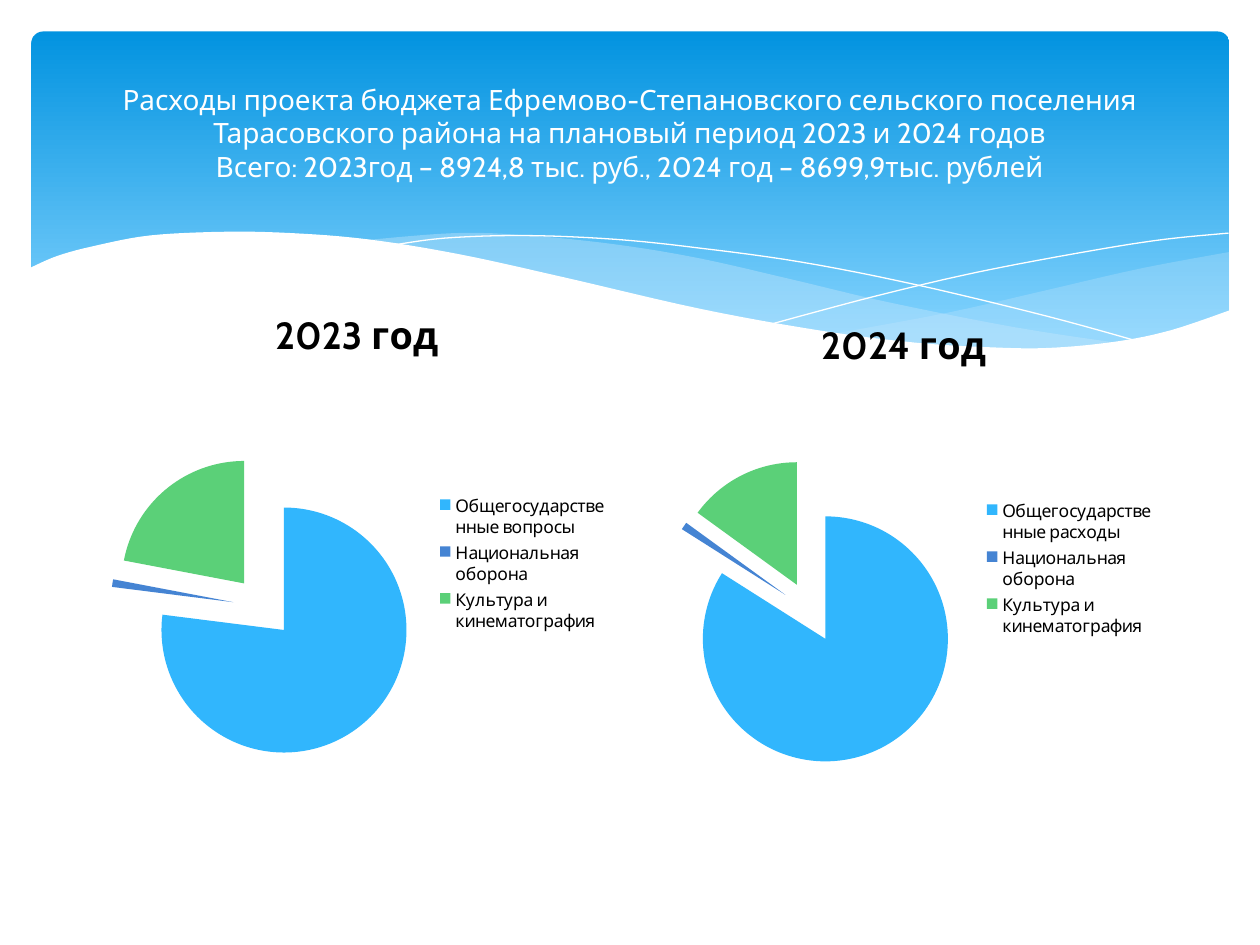
from dataclasses import dataclass

from lxml.etree import SubElement
from pptx import Presentation
from pptx.chart.data import CategoryChartData
from pptx.dml.color import RGBColor
from pptx.enum.chart import XL_CHART_TYPE, XL_LEGEND_POSITION
from pptx.enum.shapes import MSO_SHAPE
from pptx.enum.text import MSO_ANCHOR, PP_ALIGN
from pptx.oxml.ns import qn
from pptx.slide import Slide
from pptx.text.text import TextFrame
from pptx.util import Pt

Point = tuple[float, float]


@dataclass(frozen=True)
class Theme:
    font: str = "Cabin"
    white: str = "FFFFFF"
    black: str = "000000"
    sky: str = "0293E0"
    pale: str = "83D3FE"
    mist: str = "C6E7FC"
    slices: tuple[str, ...] = ("31B6FD", "4584D3", "5BD078")
    title: float = 16
    head: float = 21.6
    label: float = 10


@dataclass(frozen=True)
class Wave:
    curves: tuple[tuple[Point, ...], ...]
    color: str
    alpha: int = 100
    closed: bool = True


@dataclass(frozen=True)
class Pie:
    box: tuple[float, float, float, float]
    title: str
    series: str
    names: tuple[str, ...]
    values: tuple[int, ...]


THEME = Theme()

WAVES = (
    Wave((((702.5, 144), (652, 153.4), (599, 165.6), (542, 178.6), (476, 190.8)),
          ((476, 190.8), (518, 196), (562, 199.4), (608, 199.4), (646, 194.4),
           (678, 186.5), (702.5, 177.8))), THEME.mist, 29),
    Wave((((643, 196.6), (581, 187.2), (508, 172.8), (453, 159.8), (399.6, 147.6),
           (352, 139.7), (302.4, 134.6), (260, 133.2), (206, 137.5)),
          ((206, 137.5), (246, 143.3), (291, 152), (323, 159.8), (381.6, 172.8),
           (432.7, 183.6), (489.6, 193), (538.6, 198.7), (589, 200.2),
           (617, 199.4), (643, 196.6))), THEME.mist, 40),
    Wave((((222.5, 140.4), (254, 136.1), (299.5, 134.6), (352, 136.8), (400, 141.8),
           (458, 149.8), (523.4, 162.7), (598.3, 180.7), (653, 195.8)),),
         THEME.white, closed=False),
    Wave((((441.4, 185), (500.4, 169.2), (558.7, 155.5), (623.5, 143.3),
           (665.3, 136.8), (702, 133.2)),), THEME.white, closed=False),
    Wave((((703.4, 177.1), (669.6, 188.6), (638.6, 195.1), (602.6, 198.7),
           (571, 198.7), (522.7, 195.8), (466.6, 188.6), (399.6, 176.4),
           (321.8, 158.4), (262.8, 145.4), (210.2, 136.8), (165.6, 133.2),
           (127.4, 132.5), (85.7, 134.6), (54.7, 140.4), (33, 146.2), (16.6, 153.4)),
          ((16.6, 236.9), (703.4, 236.9))), THEME.white),
)

PIES = (
    Pie((53.3, 162, 301, 320.4), "2023 год", "Series 1",
        ("Общегосударственные вопросы", "Национальная оборона",
         "Культура и кинематография"), (77, 1, 22)),
    Pie((365.8, 167.8, 301, 314.6), "2024 год", "2024 год",
        ("Общегосударственные расходы", "Национальная оборона",
         "Культура и кинематография"), (84, 1, 15)),
)

TITLE = (
    "Расходы проекта бюджета Ефремово-Степановского сельского поселения "
    "Тарасовского района на плановый период 2023 и 2024 годов\n"
    "Всего: 2023год – 8924,8 тыс. руб., 2024 год – 8699,9тыс. рублей"
)


def tint(code: str) -> RGBColor:
    return RGBColor.from_string(code)


def write(frame: TextFrame, text: str, *, size: float, color: str,
          bold: bool = False) -> None:
    line = frame.paragraphs[0]
    line.text = text
    line.alignment = PP_ALIGN.CENTER
    for run in line.runs:
        run.font.name = THEME.font
        run.font.size = Pt(size)
        run.font.bold = bold
        run.font.color.rgb = tint(color)


def smooth(knots: tuple[Point, ...], steps: int = 6) -> list[Point]:
    if len(knots) < 3:
        return list(knots)
    ends = (knots[0], *knots, knots[-1])
    curve = [knots[0]]
    for a, b, c, d in zip(ends, ends[1:], ends[2:], ends[3:]):
        for step in range(1, steps + 1):
            t = step / steps
            curve.append(tuple(
                q + t / 2 * (r - p + t * (2 * p - 5 * q + 4 * r - s
                                          + t * (3 * q - p - 3 * r + s)))
                for p, q, r, s in zip(a, b, c, d)))
    return curve


def draw_band(slide: Slide) -> None:
    band = slide.shapes.add_shape(
        MSO_SHAPE.ROUNDED_RECTANGLE, Pt(18), Pt(18), Pt(684.5), Pt(194.4))
    band.adjustments[0] = 0.034
    band.shadow.inherit = False
    band.line.fill.background()
    band.fill.gradient()
    band.fill.gradient_angle = 270
    stops = zip(band.fill.gradient_stops, (THEME.sky, THEME.pale), (0, 0.9))
    for stop, color, place in stops:
        stop.color.rgb = tint(color)
        stop.position = place


def draw_wave(slide: Slide, wave: Wave) -> None:
    dots = [(Pt(x), Pt(y)) for curve in wave.curves for x, y in smooth(curve)]
    pen = slide.shapes.build_freeform(*dots[0])
    pen.add_line_segments(dots[1:], close=wave.closed)
    shape = pen.convert_to_shape()
    shape.shadow.inherit = False
    if not wave.closed:
        shape.fill.background()
        shape.line.color.rgb = tint(wave.color)
        shape.line.width = Pt(0)
        return
    shape.line.fill.background()
    shape.fill.solid()
    shape.fill.fore_color.rgb = tint(wave.color)
    if wave.alpha < 100:
        color = shape._element.spPr.find(qn("a:solidFill"))[0]
        SubElement(color, qn("a:alpha"), val=str(wave.alpha * 1000))


def draw_title(slide: Slide) -> None:
    frame = slide.shapes.add_textbox(Pt(36), Pt(26.6), Pt(648), Pt(98.6)).text_frame
    frame.word_wrap = True
    frame.vertical_anchor = MSO_ANCHOR.MIDDLE
    write(frame, TITLE, size=THEME.title, color=THEME.white)


def draw_pie(slide: Slide, pie: Pie) -> None:
    data = CategoryChartData()
    data.categories = pie.names
    data.add_series(pie.series, pie.values)
    chart = slide.shapes.add_chart(
        XL_CHART_TYPE.PIE, *map(Pt, pie.box), data).chart
    chart.font.name = THEME.font
    chart.font.size = Pt(18)
    chart.font.color.rgb = tint(THEME.black)
    chart.has_title = True
    write(chart.chart_title.text_frame, pie.title,
          size=THEME.head, color=THEME.black, bold=True)
    chart.has_legend = True
    key = chart.legend
    key.position = XL_LEGEND_POSITION.RIGHT
    key.include_in_layout = False
    key.font.name = THEME.font
    key.font.size = Pt(THEME.label)
    key.font.color.rgb = tint(THEME.black)
    plot = chart.plots[0]
    plot.vary_by_categories = True
    series = plot.series[0]
    for index, color in enumerate(THEME.slices):
        fill = series.points[index].format.fill
        fill.solid()
        fill.fore_color.rgb = tint(color)
    node = series._element
    burst = SubElement(node, qn("c:explosion"), val="25")
    node.find(qn("c:dPt")).addprevious(burst)


def main() -> None:
    deck = Presentation()
    deck.slide_width, deck.slide_height = Pt(720), Pt(540)
    slide = deck.slides.add_slide(deck.slide_layouts[6])
    draw_band(slide)
    for wave in WAVES:
        draw_wave(slide, wave)
    draw_title(slide)
    for pie in PIES:
        draw_pie(slide, pie)
    deck.save("out.pptx")


if __name__ == "__main__":
    main()
